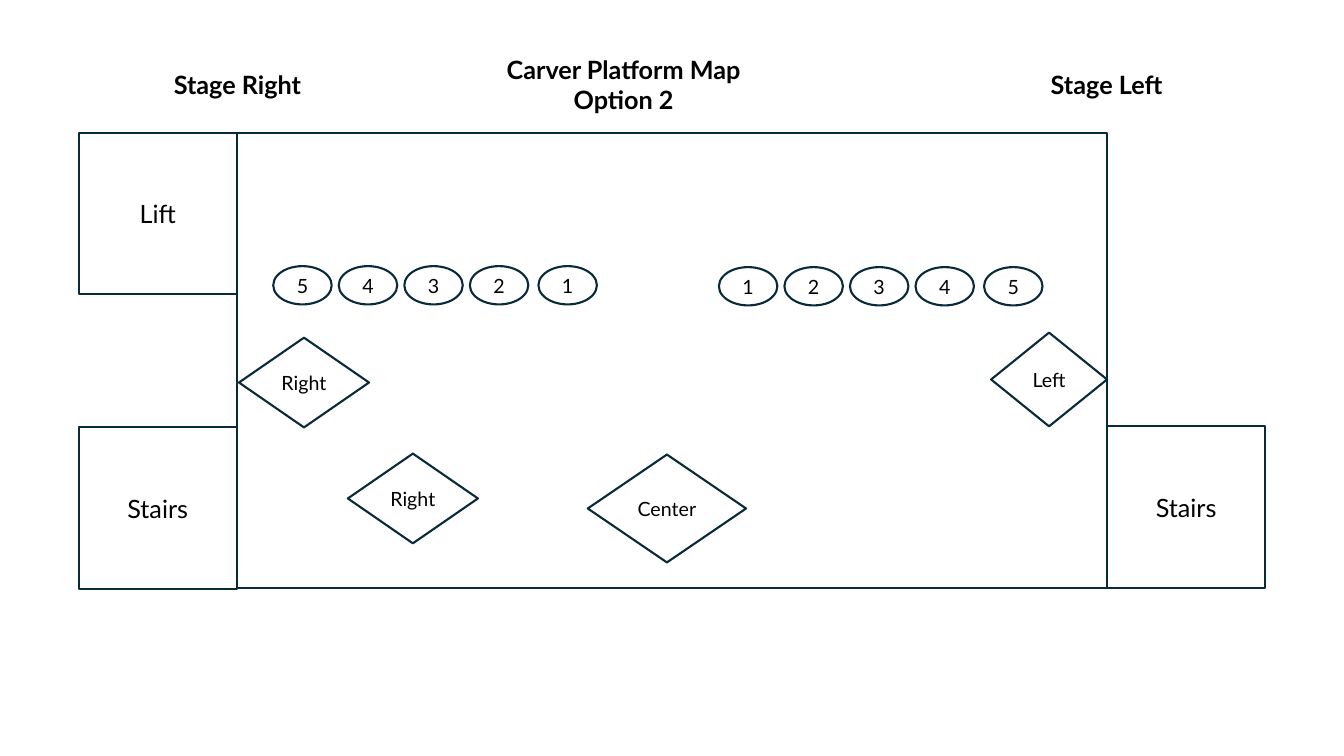
from dataclasses import dataclass

from pptx import Presentation
from pptx.dml.color import RGBColor
from pptx.enum.shapes import MSO_SHAPE as Kind
from pptx.enum.text import MSO_ANCHOR as Anchor, MSO_AUTO_SIZE as Auto, PP_ALIGN as Align
from pptx.util import Inches, Pt


@dataclass(frozen=True)
class Theme:
    ink: RGBColor = RGBColor(0x00, 0x00, 0x00)
    edge: RGBColor = RGBColor(0x09, 0x2A, 0x39)
    font: str = "Lato"
    large: int = 18
    small: int = 14
    line: float = 1.5


THEME = Theme()


def write(frame, lines, size, bold=False, anchor=Anchor.MIDDLE):
    frame.auto_size = Auto.NONE
    frame.vertical_anchor = anchor
    for i, line in enumerate(lines):
        para = frame.paragraphs[0] if i == 0 else frame.add_paragraph()
        para.alignment = Align.CENTER
        para.line_spacing = 1.0
        para.space_before = Pt(0)
        run = para.add_run()
        run.text = line
        font = run.font
        font.name, font.size, font.bold = THEME.font, Pt(size), bold
        font.color.rgb = THEME.ink


def outline(group, kind, box, label="", size=THEME.small):
    shape = group.shapes.add_shape(kind, *map(Inches, box))
    shape.shadow.inherit = False
    shape.fill.background()
    shape.line.color.rgb = THEME.edge
    shape.line.width = Pt(THEME.line)
    if label:
        frame = shape.text_frame
        frame.word_wrap = False
        frame.margin_left = frame.margin_right = 0
        frame.margin_top = frame.margin_bottom = 0
        write(frame, [label], size)


def header(slide, box):
    """Place the title between the two stage side labels."""
    left, top, width, height = box
    part = 3.79
    title = slide.shapes.title
    title.left, title.top = Inches(left + 3.83), Inches(top)
    title.width, title.height = Inches(part), Inches(height)
    title.text_frame.word_wrap = True
    write(title.text_frame, ["Carver Platform Map", "Option 2"],
          THEME.large, True, Anchor.TOP)
    for x, label in ((left, "Stage Right"), (left + width - part, "Stage Left")):
        side = slide.shapes.add_textbox(
            Inches(x), Inches(top + 0.15), Inches(part), Inches(0.4))
        side.text_frame.word_wrap = True
        write(side.text_frame, [label], THEME.large, True, Anchor.TOP)


def access(group, box):
    """Put the lift and both stairs against the outside of the stage."""
    left, top, width, height = box
    wide, high = 1.57, 1.6
    low = top + height - high
    for label, x, y in (("Stairs", left - wide, low + 0.01),
                        ("Lift", left - wide, top),
                        ("Stairs", left + width, low)):
        outline(group, Kind.RECTANGLE, (x, y, wide, high), label, THEME.large)


def platforms(group, box):
    left, top = box[:2]
    for label, x, y, wide, high in (("Center", 3.48, 3.19, 1.57, 1.07),
                                    ("Right", 0.02, 2.03, 1.29, 0.89),
                                    ("Left", 7.48, 1.98, 1.15, 0.93),
                                    ("Right", 1.1, 3.18, 1.29, 0.89)):
        outline(group, Kind.DIAMOND, (left + x, top + y, wide, high), label)


def seats(group, box, labels):
    """Spread one row of seats, the last set slightly apart."""
    left, top, width, height = box
    wide, pitch = 0.58, 0.65
    for i, label in enumerate(labels):
        x = left + i * pitch
        if i == len(labels) - 1:
            x = left + width - wide
        outline(group, Kind.OVAL, (x, top, wide, height), label)


def stage(slide, box):
    left, top = box[:2]
    group = slide.shapes.add_group_shape()
    outline(group, Kind.RECTANGLE, box)
    access(group, box)
    platforms(group, box)
    seats(group, (left + 0.36, top + 1.32, 3.21, 0.38), "54321")
    seats(group, (left + 4.78, top + 1.33, 3.21, 0.38), "12345")


def main():
    deck = Presentation()
    deck.slide_width, deck.slide_height = Inches(13.33), Inches(7.5)
    slide = deck.slides.add_slide(deck.slide_layouts[5])
    header(slide, (0.46, 0.49, 12.41, 0.71))
    stage(slide, (2.35, 1.32, 8.63, 4.51))
    deck.save("out.pptx")


if __name__ == "__main__":
    main()
